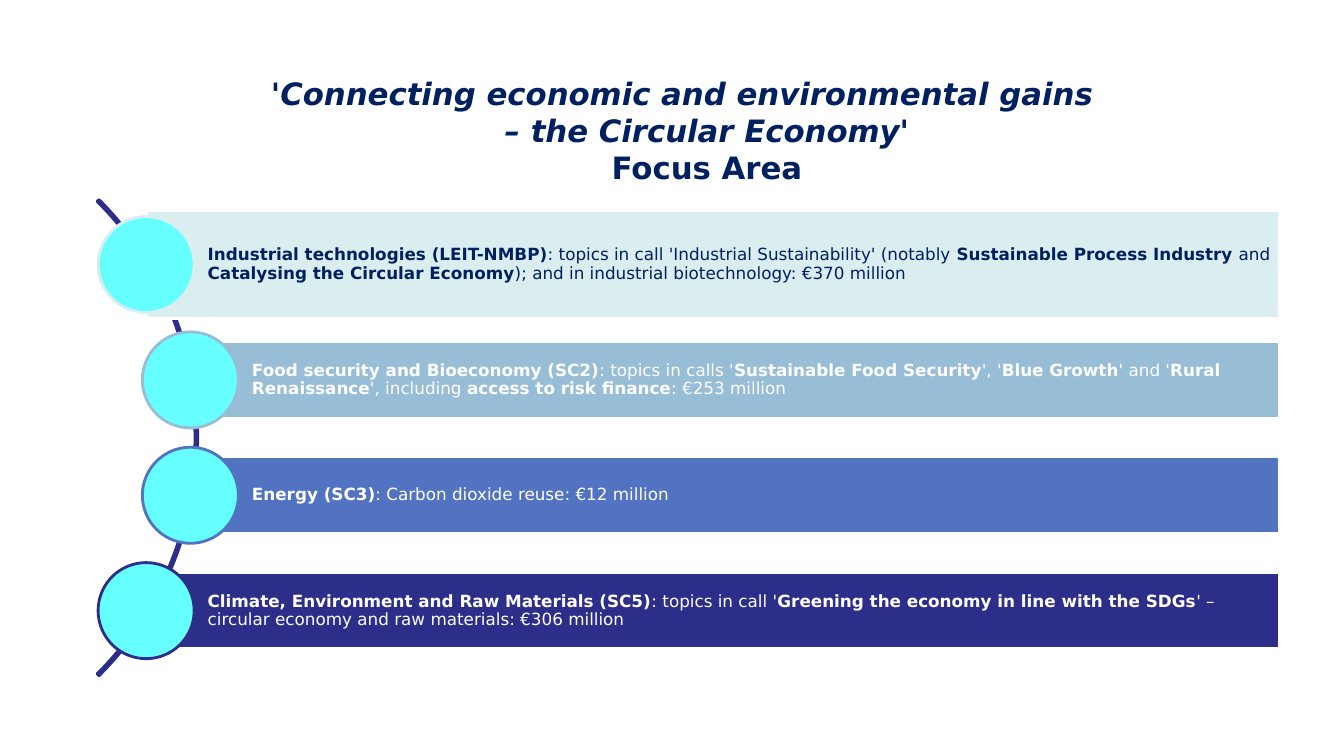
from dataclasses import dataclass

from pptx import Presentation
from pptx.dml.color import RGBColor
from pptx.enum.shapes import MSO_SHAPE
from pptx.enum.text import MSO_ANCHOR, PP_ALIGN
from pptx.util import Pt

TITLE_LINES = [
    ("'Connecting economic and environmental gains ", True),
    ("– the Circular Economy'", True),
    ("Focus Area", False),
]

# Runs alternate between bold and regular, starting with bold.
AREAS = [
    {"color": "DAEDEF", "text_color": "002060", "left": 104.4, "height": 77, "runs": [
        "Industrial technologies (LEIT-NMBP)",
        ": topics in call 'Industrial Sustainability' (notably ",
        "Sustainable Process Industry ", "and ",
        "Catalysing the Circular Economy",
        "); and in industrial biotechnology: €370 million"]},
    {"color": "98BDD6", "text_color": "FFFFFF", "left": 136, "height": 54.7, "runs": [
        "Food security and Bioeconomy (SC2)", ": topics in calls '",
        "Sustainable Food Security", "', '", "Blue Growth", "' and '",
        "Rural Renaissance", "', including ",
        "access to risk finance", ": €253 million"]},
    {"color": "5273C1", "text_color": "FFFFFF", "left": 136, "height": 54.7, "runs": [
        "Energy (SC3)", ": Carbon dioxide reuse: €12 million"]},
    {"color": "2D2D8A", "text_color": "FFFFFF", "left": 104.4, "height": 54.7, "runs": [
        "Climate, Environment and Raw Materials (SC5)", ": topics in call '",
        "Greening the economy in line with the SDGs",
        "' – circular economy and raw materials: €306 million"]},
]


@dataclass(frozen=True)
class Theme:
    font: str = "DejaVu Sans"
    title_size: float = 22
    body_size: float = 12
    title_color: str = "002060"
    arc_color: str = "2D2D8A"
    circle_color: str = "66FFFF"
    bar_line: str = "FFFFFF"
    line_width: float = 2


THEME = Theme()
BAR_RIGHT = 913.7
FIRST_CENTER = 189
ROW_PITCH = 82.4
CIRCLE = 68.6
ARC_LEFT, ARC_TOP, ARC_SIZE = -339.8, 72.1, 481
TITLE_INDENT = 28


def add_outlined(slide, kind, left, top, width, height, fill, line):
    shape = slide.shapes.add_shape(kind, Pt(left), Pt(top), Pt(width), Pt(height))
    shape.shadow.inherit = False
    if fill:
        shape.fill.solid()
        shape.fill.fore_color.rgb = RGBColor.from_string(fill)
    else:
        shape.fill.background()
    shape.line.color.rgb = RGBColor.from_string(line)
    shape.line.width = Pt(THEME.line_width)
    return shape


def set_font(paragraph, size, color):
    paragraph.font.name = THEME.font
    paragraph.font.size = Pt(size)
    paragraph.font.color.rgb = RGBColor.from_string(color)


def add_title(slide):
    frame = slide.shapes.add_textbox(Pt(33.8), Pt(50), Pt(914.4), Pt(86)).text_frame
    frame.word_wrap = True
    frame.vertical_anchor = MSO_ANCHOR.MIDDLE
    paragraph = frame.paragraphs[0]
    paragraph.alignment = PP_ALIGN.CENTER
    properties = paragraph._p.get_or_add_pPr()
    properties.set("marL", str(Pt(TITLE_INDENT)))
    properties.set("indent", str(-Pt(TITLE_INDENT)))
    set_font(paragraph, THEME.title_size, THEME.title_color)
    paragraph.font.bold = True
    for index, (text, italic) in enumerate(TITLE_LINES):
        if index:
            paragraph.add_line_break()
        run = paragraph.add_run()
        run.text = text
        run.font.italic = italic


def add_arc(slide):
    arc = add_outlined(slide, MSO_SHAPE.BLOCK_ARC, ARC_LEFT, ARC_TOP,
                       ARC_SIZE, ARC_SIZE, None, THEME.arc_color)
    for index, value in enumerate((189, 27, 0.004)):
        arc.adjustments[index] = value


def add_area(slide, area, center):
    left, height = area["left"], area["height"]
    bar = add_outlined(slide, MSO_SHAPE.RECTANGLE, left, center - height / 2,
                       BAR_RIGHT - left, height, area["color"], THEME.bar_line)
    frame = bar.text_frame
    frame.word_wrap = True
    frame.vertical_anchor = MSO_ANCHOR.MIDDLE
    frame.margin_left = Pt(44)
    frame.margin_top = frame.margin_right = frame.margin_bottom = Pt(2.2)
    paragraph = frame.paragraphs[0]
    paragraph.alignment = PP_ALIGN.LEFT
    paragraph.line_spacing = 0.9
    set_font(paragraph, THEME.body_size, area["text_color"])
    for index, text in enumerate(area["runs"]):
        run = paragraph.add_run()
        run.text = text
        run.font.bold = index % 2 == 0
    add_outlined(slide, MSO_SHAPE.OVAL, left - CIRCLE / 2, center - CIRCLE / 2,
                 CIRCLE, CIRCLE, THEME.circle_color, area["color"])


def main():
    presentation = Presentation()
    presentation.slide_width, presentation.slide_height = Pt(960), Pt(540)
    slide = presentation.slides.add_slide(presentation.slide_layouts[6])
    add_arc(slide)
    for index, area in enumerate(AREAS):
        add_area(slide, area, FIRST_CENTER + index * ROW_PITCH)
    add_title(slide)
    presentation.save("out.pptx")


if __name__ == "__main__":
    main()
